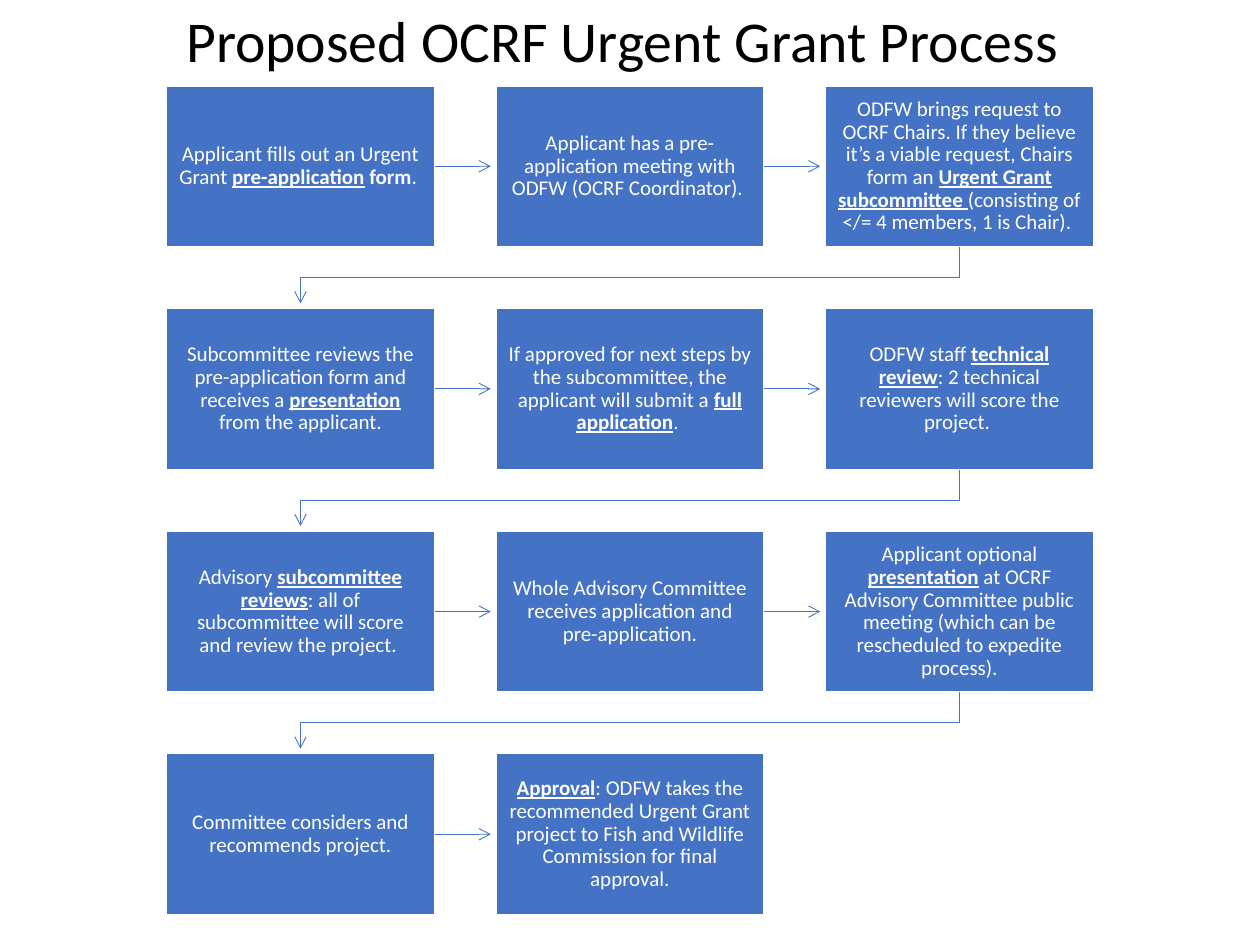
"""Build the urgent grant process flowchart slide."""
import pptx
import pptx.dml.color
import pptx.enum.shapes
import pptx.enum.text
import pptx.oxml
import pptx.oxml.ns
import pptx.util

Inches = pptx.util.Inches
Pt = pptx.util.Pt

COLUMNS = 3
LEFT, TOP = 1.32, 0.68
BOX_WIDTH, BOX_HEIGHT = 2.13, 1.28
COLUMN_STEP, ROW_STEP = 2.615, 1.767
ARROW_GAP = 0.04
RIGHT_SIDE = 3


def color(hex_value):
    return pptx.dml.color.RGBColor.from_string(hex_value)


def strong(text, underline=True):
    return {"text": text, "bold": True, "underline": underline}


def write_text(frame, pieces, size, hex_value, font="Calibri", align="LEFT", margins=(0.1, 0.05)):
    frame.word_wrap = True
    frame.vertical_anchor = pptx.enum.text.MSO_ANCHOR.MIDDLE
    frame.margin_left = frame.margin_right = Inches(margins[0])
    frame.margin_top = frame.margin_bottom = Inches(margins[1])
    paragraph = frame.paragraphs[0]
    paragraph.alignment = getattr(pptx.enum.text.PP_ALIGN, align)
    paragraph.line_spacing = 0.9
    for piece in pieces:
        piece = {"text": piece} if isinstance(piece, str) else piece
        run = paragraph.add_run()
        run.text = piece["text"]
        run.font.name = font
        run.font.size = Pt(size)
        run.font.color.rgb = color(hex_value)
        run.font.bold = piece.get("bold", False)
        run.font.underline = piece.get("underline", False)


class FlowSlide:
    def __init__(self, slide, accent="4472C4", light="FFFFFF", dark="000000"):
        self.slide = slide
        self.accent, self.light, self.dark = accent, light, dark

    def title(self, text, left, top, width, height):
        shape = self.slide.shapes.add_textbox(*map(Inches, (left, top, width, height)))
        write_text(shape.text_frame, [text], 33, self.dark)

    def box(self, pieces, left, top):
        shape = self.slide.shapes.add_shape(
            pptx.enum.shapes.MSO_SHAPE.RECTANGLE,
            *map(Inches, (left, top, BOX_WIDTH, BOX_HEIGHT)))
        shape.shadow.inherit = False
        shape.fill.solid()
        shape.fill.fore_color.rgb = color(self.accent)
        shape.line.color.rgb = color(self.light)
        shape.line.width = Pt(1)
        write_text(shape.text_frame, pieces, 12, self.light, align="CENTER", margins=(0.1, 0.11))
        return shape

    def arrow_style(self, shape):
        shape.line.color.rgb = color(self.accent)
        shape.line.width = Pt(0.5)
        tail = pptx.oxml.parse_xml(
            f'<a:tailEnd {pptx.oxml.ns.nsdecls("a")} type="arrow" w="med" len="med"/>')
        shape.line._get_or_add_ln().append(tail)

    def straight_arrow(self, source, target):
        middle = source.top + source.height // 2
        connector = self.slide.shapes.add_connector(
            pptx.enum.shapes.MSO_CONNECTOR.STRAIGHT,
            source.left + source.width, middle, target.left - Inches(ARROW_GAP), middle)
        connector.begin_connect(source, RIGHT_SIDE)
        self.arrow_style(connector)
        effects = pptx.oxml.parse_xml(f'<a:effectLst {pptx.oxml.ns.nsdecls("a")}/>')
        connector._element.spPr.append(effects)

    def return_arrow(self, source, target):
        start_x = source.left + source.width // 2
        end_x = target.left + target.width // 2
        bottom = source.top + source.height
        turn = (bottom + target.top) // 2
        builder = self.slide.shapes.build_freeform(start_x, bottom)
        builder.add_line_segments(
            [(start_x, turn), (end_x, turn), (end_x, target.top - Inches(ARROW_GAP))], close=False)
        shape = builder.convert_to_shape()
        shape.shadow.inherit = False
        shape.fill.background()
        self.arrow_style(shape)


STEPS = [
    ["Applicant fills out an Urgent Grant ", strong("pre-application"),
     strong(" form", underline=False), ". "],
    ["Applicant has a pre-application meeting with ODFW (OCRF Coordinator). "],
    ["ODFW brings request to OCRF Chairs. If they believe it’s a viable request, Chairs form an ",
     strong("Urgent Grant subcommittee "), "(consisting of </= 4 members, 1 is Chair). "],
    ["Subcommittee reviews the pre-application form and receives a ",
     strong("presentation"), " from the applicant."],
    ["If approved for next steps by the subcommittee, the applicant will submit a ",
     strong("full application"), ". "],
    ["ODFW staff ", strong("technical review"), ": 2 technical reviewers will score the project. "],
    ["Advisory ", strong("subcommittee reviews"),
     ": all of subcommittee will score and review the project. "],
    ["Whole Advisory Committee receives application and pre-application."],
    ["Applicant optional ", strong("presentation"),
     " at OCRF Advisory Committee public meeting (which can be rescheduled to expedite process)."],
    ["Committee considers and recommends project."],
    [strong("Approval"), ": ODFW takes the recommended Urgent Grant project to "
     "Fish and Wildlife Commission for final approval."],
]


def main():
    presentation = pptx.Presentation()
    presentation.slide_width, presentation.slide_height = Inches(10), Inches(7.5)
    flow = FlowSlide(presentation.slides.add_slide(presentation.slide_layouts[6]))
    boxes = []
    for index, pieces in enumerate(STEPS):
        row, column = divmod(index, COLUMNS)
        boxes.append(flow.box(pieces, LEFT + column * COLUMN_STEP, TOP + row * ROW_STEP))
    for source, target in zip(boxes, boxes[1:]):
        if source.top == target.top:
            flow.straight_arrow(source, target)
        else:
            flow.return_arrow(source, target)
    flow.title("Proposed OCRF Urgent Grant Process", 1.38, -0.2, 8.62, 1.09)
    presentation.save("out.pptx")


if __name__ == "__main__":
    main()
